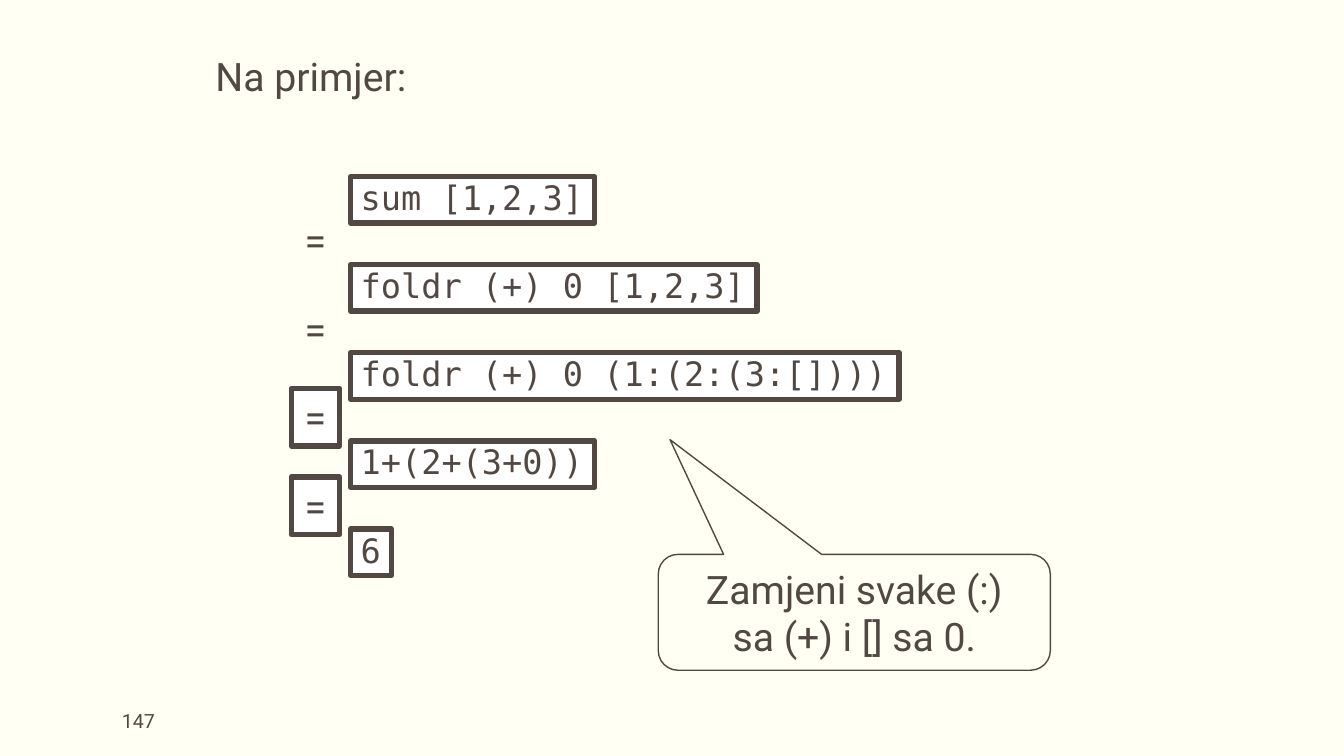
from pptx import Presentation, util as u
from pptx.dml.color import RGBColor
from pptx.enum import shapes, text

INK, PAPER, WHITE = "514843", "FFFFF3", "FFFFFF"
SANS, MONO = "Roboto", "DejaVu Sans Mono"
KIND = shapes.MSO_SHAPE
LEFT, MID = text.PP_ALIGN.LEFT, text.PP_ALIGN.CENTER
GROW = text.MSO_AUTO_SIZE.SHAPE_TO_FIT_TEXT


def tint(code):
    return RGBColor.from_string(code)


def put(box, words, size=28, face=SANS, align=LEFT, gap=None, fill=None, line=None, **style):
    kind = style.pop("kind", KIND.RECTANGLE)
    item = slide.shapes.add_shape(kind, *[u.Cm(n) for n in box])
    item.shadow.inherit = False
    if fill:
        item.fill.solid()
        item.fill.fore_color.rgb = tint(fill)
    else:
        item.fill.background()
    if line:
        item.line.color.rgb = tint(INK)
        item.line.width = u.Pt(line)
    else:
        item.line.fill.background()
    frame = item.text_frame
    base = {"vertical_anchor": text.MSO_ANCHOR.MIDDLE, "word_wrap": True, "auto_size": GROW}
    for key, val in {**base, **style}.items():
        setattr(frame, key, val)
    frame.text = words
    for para in frame.paragraphs:
        para.alignment = align
        para.line_spacing = gap
        para.font.color.rgb = tint(INK)
        for key, val in {"size": u.Pt(size), "name": face}.items():
            setattr(para.font, key, val)
    return item


deck = Presentation()
deck.slide_width, deck.slide_height = u.Cm(33.87), u.Cm(19.05)
slide = deck.slides.add_slide(deck.slide_layouts[6])
slide.background.fill.solid()
slide.background.fill.fore_color.rgb = tint(PAPER)

put((3.07, 17.65, 5.08, 1.02), "147", size=14, margin_left=0, margin_right=0,
    auto_size=text.MSO_AUTO_SIZE.NONE)
put((5.18, 1.19, 22.5, 1.45), "Na primjer:")

steps = [
    ("sum [1,2,3]", 6.15),
    ("foldr (+) 0 [1,2,3]", 10.24),
    ("foldr (+) 0 (1:(2:(3:[])))", 13.82),
    ("1+(2+(3+0))", 6.15),
    ("6", 1.02),
]
for row, (code, wide) in enumerate(steps):
    put((8.84, 4.45 + 2.22 * row, wide, 1.17), code, size=24, face=MONO, gap=0.9,
        fill=WHITE, line=3.78, word_wrap=False)
    if row:
        frame = {"fill": WHITE, "line": 3.78} if row > 2 else {}
        put((7.34, 3.1 + 2.23 * row, 1.22, 1.45), "=", align=MID, word_wrap=False, **frame)

note = put((16.59, 13.97, 9.88, 2.92), "Zamjeni svake (:)\nsa (+) i [] sa 0.",
           align=MID, line=1, kind=KIND.ROUNDED_RECTANGULAR_CALLOUT)
for spot, val in enumerate((-0.47, -1.49, 0.17)):
    note.adjustments[spot] = val

deck.save("out.pptx")
